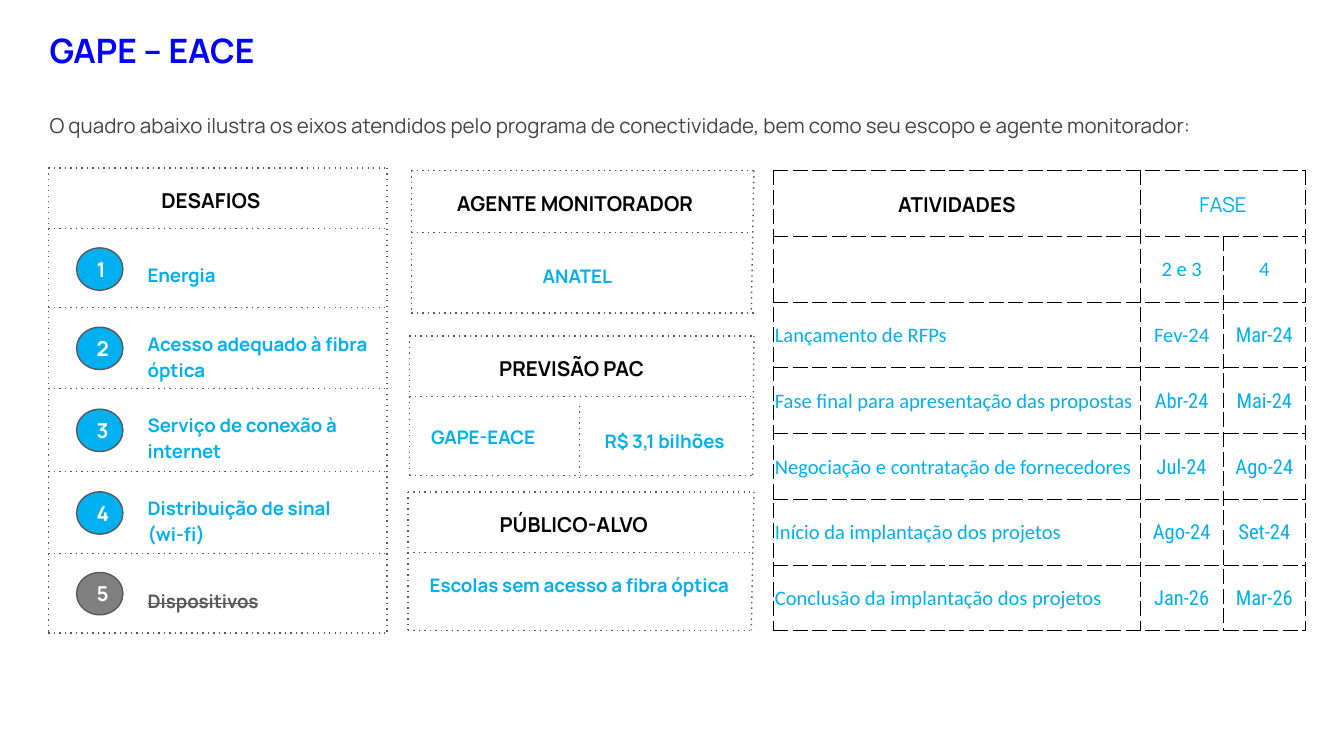
"""Builds the GAPE – EACE connectivity programme slide."""
from lxml.etree import SubElement
from pptx import Presentation
from pptx.dml.color import RGBColor
from pptx.enum.shapes import MSO_CONNECTOR, MSO_SHAPE
from pptx.enum.text import MSO_ANCHOR, PP_ALIGN
from pptx.oxml import parse_xml
from pptx.oxml.ns import nsdecls, qn
from pptx.util import Inches, Pt

BLUE, CYAN, BLACK, GREY, WHITE = "0000FF", "00B0F0", "000000", "595959", "FFFFFF"
LEFT, CENTER = PP_ALIGN.LEFT, PP_ALIGN.CENTER

prs = Presentation()
prs.slide_width = Inches(10)
prs.slide_height = prs.slide_width * 9 // 16
s = prs.slides.add_slide(prs.slide_layouts[6])
U = prs.slide_width / 100


def grid(*units):
    return [round(n * U) for n in units]


def write(tf, text, size, color, bold=True, align=LEFT, spacing=1.0, font="Manrope"):
    p = tf.paragraphs[0]
    p.alignment, p.line_spacing = align, spacing
    r = p.add_run()
    r.text = text
    r.font.size, r.font.name, r.font.bold = Pt(size), font, bold
    r.font.color.rgb = RGBColor.from_string(color)
    return r


panels = [
    (3.6, 28.8, 28.6, 28.8, 12.5, [17, 22.9, 28.9, 35.1, 41.2], 47.1),
    (30.6, 56.1, 55.9, 55.9, 12.7, [17.3], 23.3),
    (30.45, 56.1, 55.9, 56, 25, [29.5], 35.4),
    (30.35, 56.1, 55.9, 55.9, 36.6, [41.1], 46.9),
]
lines = [(43.1, 30.2, 43.1, 35.6)]
for left, right, rule_end, foot, top, rules, bottom in panels:
    lines += [(left, top, left, bottom), (right, top, foot, bottom)]
    lines += [(left, top, right, top), (left, bottom, right, bottom)]
    lines += [(left, y, rule_end, y) for y in rules]
for line in lines:
    c = s.shapes.add_connector(MSO_CONNECTOR.STRAIGHT, *grid(*line))
    c.line.color.rgb = RGBColor.from_string(GREY)
    c.line.width = Pt(0.75)
    spPr = c._element.spPr
    SubElement(spPr.find(qn("a:ln")), qn("a:prstDash"), val="dot")
    SubElement(spPr, qn("a:effectLst"))

challenges = [
    ("Energia", 18.45, 18.4, CYAN),
    ("Acesso adequado à fibra óptica", 24.35, 23.5, CYAN),
    ("Serviço de conexão à internet", 30.45, 29.55, CYAN),
    ("Distribuição de sinal (wi-fi)", 36.6, 35.75, CYAN),
    ("Dispositivos", 42.6, 42.7, GREY),
]
labels = [
    (2.7, 1.2, 75.2, 5, "GAPE – EACE", 18, BLUE, True, LEFT, 1),
    (2.7, 7.15, 92.9, 4.1, "O quadro abaixo ilustra os eixos atendidos pelo programa de conectividade, "
     "bem como seu escopo e agente monitorador:", 11, "434343", False, LEFT, 1.15),
    (1.2, 13.1, 29, 3.9, "DESAFIOS", 11, BLACK, True, CENTER, 1),
    (28.1, 13.3, 29.4, 3.3, "AGENTE MONITORADOR", 11, BLACK, True, CENTER, 1),
    (27.9, 25.6, 29.6, 3.9, "PREVISÃO PAC ", 11, BLACK, True, CENTER, 1),
    (27.9, 37.2, 29.6, 3.8, "PÚBLICO-ALVO", 11, BLACK, True, CENTER, 1),
    (39.4, 18.5, 8.7, 4, "ANATEL", 10, CYAN, True, LEFT, 1.15),
    (31.1, 30.45, 11.7, 4, "GAPE-EACE", 10, CYAN, True, LEFT, 1.15),
    (44, 30.8, 12, 4, "R$ 3,1 bilhões", 10, CYAN, True, LEFT, 1.15),
    (30.95, 41.5, 24.3, 3.9, "Escolas sem acesso a fibra óptica", 10, CYAN, True, CENTER, 1.15),
]
labels += [(10, y, 18.45, 5.9 if " " in text else 4, text, 10, color, True, LEFT, 1.15)
           for text, _, y, color in challenges]
for x, y, w, h, text, size, color, bold, align, spacing in labels:
    tf = s.shapes.add_textbox(*grid(x, y, w, h)).text_frame
    tf.word_wrap = True
    tf.margin_left, tf.margin_top, tf.margin_right, tf.margin_bottom = grid(1, 1, 1, 1)
    r = write(tf, text, size, color, bold, align, spacing)
    if text == "Dispositivos":
        r._r.get_or_add_rPr().set("strike", "sngStrike")

for number, (_, y, _, color) in enumerate(challenges, 1):
    sp = s.shapes.add_shape(MSO_SHAPE.OVAL, *grid(5.7, y, 3.45, 3.15))
    sp.shadow.inherit = False
    sp.fill.solid()
    sp.fill.fore_color.rgb = RGBColor.from_string(CYAN if color == CYAN else "808080")
    sp.line.color.rgb = RGBColor.from_string(GREY)
    sp.line.width = Pt(0.75)
    tf = sp.text_frame
    tf.vertical_anchor = MSO_ANCHOR.MIDDLE
    tf.margin_left, tf.margin_top, tf.margin_right, tf.margin_bottom = grid(1, 1, 1, 1)
    write(tf, str(number), 11, WHITE, align=CENTER)

rows = [
    ("ATIVIDADES", "FASE", ""),
    ("", "2 e 3", "4"),
    ("Lançamento de RFPs", "Fev-24", "Mar-24"),
    ("Fase final para apresentação das propostas", "Abr-24", "Mai-24"),
    ("Negociação e contratação de fornecedores", "Jul-24", "Ago-24"),
    ("Início da implantação dos projetos", "Ago-24", "Set-24"),
    ("Conclusão da implantação dos projetos", "Jan-26", "Mar-26"),
]
table = s.shapes.add_table(len(rows), 3, *grid(57.55, 12.7, 39.6, 34.23)).table
table.first_row = table.horz_banding = False
for column, width in zip(table.columns, grid(27.3, 6.15, 6.15)):
    column.width = width
table.cell(0, 1).merge(table.cell(0, 2))
for i, row in enumerate(rows):
    for j, text in enumerate(row):
        cell = table.cell(i, j)
        cell.vertical_anchor = MSO_ANCHOR.MIDDLE
        cell.margin_left, cell.margin_top, cell.margin_right, cell.margin_bottom = grid(0.1, 0.1, 0.1, 0)
        tcPr = cell._tc.get_or_add_tcPr()
        for side in ("lnL", "lnR", "lnT", "lnB"):
            tcPr.append(parse_xml(
                f'<a:{side} {nsdecls("a")} w="{Pt(0.5)}"><a:solidFill><a:srgbClr val="{BLACK}"/>'
                f'</a:solidFill><a:prstDash val="dash"/></a:{side}>'))
        cell.fill.background()
        if text:
            dated = j == 2 and i > 1 or j == 1 and i > 2
            font = "Manrope" if i == 0 else "Roboto Condensed" if dated else "Calibri"
            write(cell.text_frame, text, 11, BLACK if i == j == 0 else CYAN, i == j == 0,
                  LEFT if j == 0 and i else CENTER, font=font)

prs.save("out.pptx")
